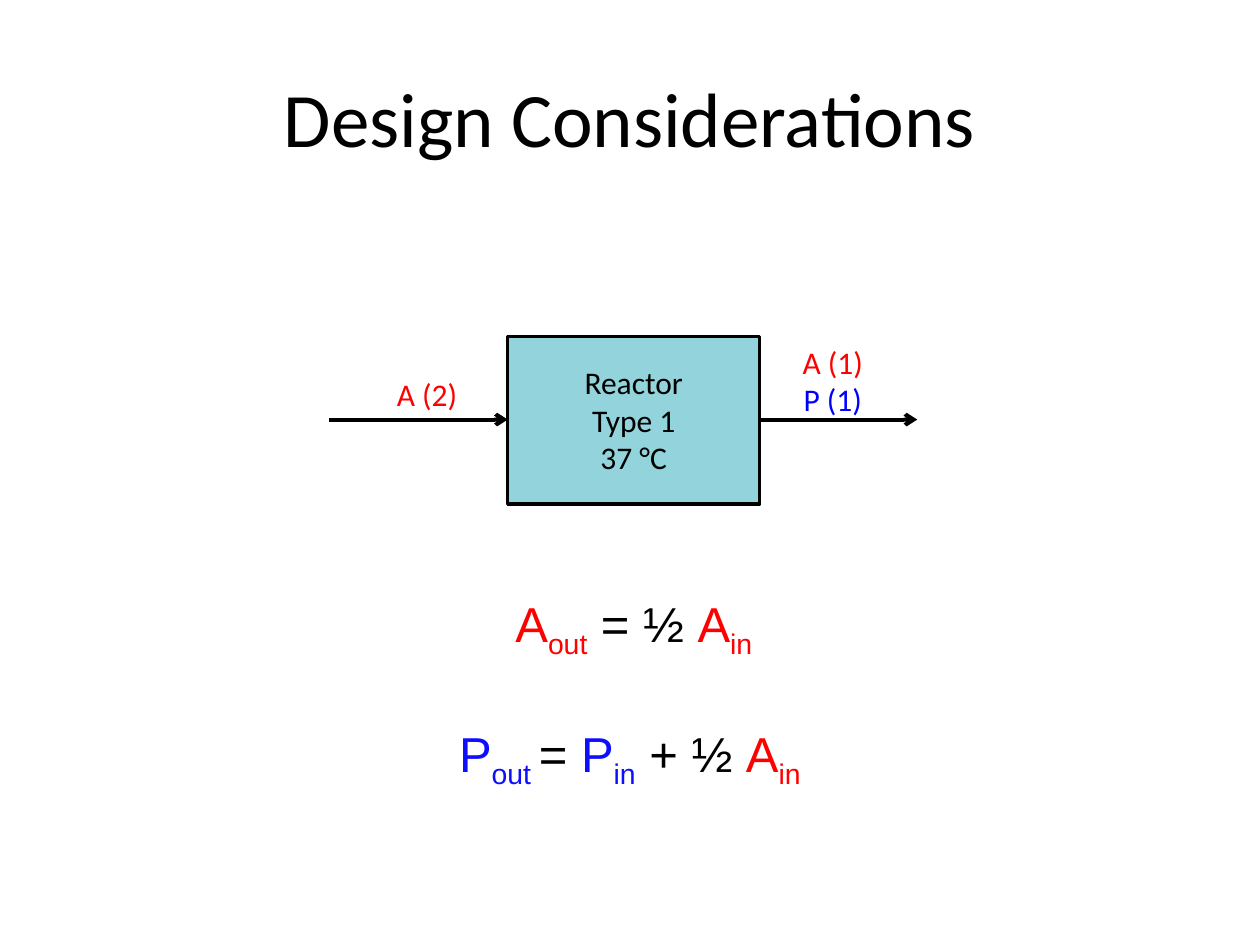
from pptx import Presentation
from pptx.dml.color import RGBColor
from pptx.enum.shapes import MSO_CONNECTOR, MSO_SHAPE
from pptx.enum.text import MSO_ANCHOR, MSO_AUTO_SIZE, PP_ALIGN
from pptx.oxml.ns import qn
from pptx.util import Inches, Pt
from lxml import etree

RECTANGLE = MSO_SHAPE.RECTANGLE
STRAIGHT = MSO_CONNECTOR.STRAIGHT
MIDDLE = MSO_ANCHOR.MIDDLE
CENTER = PP_ALIGN.CENTER
GROW = MSO_AUTO_SIZE.SHAPE_TO_FIT_TEXT
TITLE_ONLY = 5

COLORS = {
    "black": "000000",
    "reactor": "92D3DC",
    "A": "FF0000",
    "P": "0000FF",
    "P equation": "0E0EFF",
}


def color(name):
    return RGBColor.from_string(COLORS[name])


def add_run(paragraph, text, size=18, font="Calibri", fill="black", subscript=False):
    run = paragraph.add_run()
    run.text = text
    run.font.size = Pt(size)
    run.font.name = font
    run.font.color.rgb = color(fill)
    if subscript:
        run.font._element.set("baseline", "-25000")


def write_lines(frame, lines, gap=0, **style):
    """Write centred lines, each a list of (text, format) runs, gap points apart."""
    for index, runs in enumerate(lines):
        paragraph = frame.add_paragraph() if index else frame.paragraphs[0]
        paragraph.alignment = CENTER
        if index and gap:
            paragraph.space_before = Pt(gap)
        for text, run_format in runs:
            add_run(paragraph, text, **{**style, **run_format})


class ReactorSlide:
    def __init__(self, presentation):
        self.slide = presentation.slides.add_slide(presentation.slide_layouts[TITLE_ONLY])
        self.shapes = self.slide.shapes

    def title(self, text, left, top, width, height):
        title = self.slide.shapes.title
        title.left, title.top = Inches(left), Inches(top)
        title.width, title.height = Inches(width), Inches(height)
        title.text_frame.vertical_anchor = MIDDLE
        write_lines(title.text_frame, [[(text, {})]], size=44)

    def start_group(self):
        self.shapes = self.slide.shapes.add_group_shape().shapes

    def end_group(self):
        self.shapes = self.slide.shapes

    def box(self, left, top, width, height):
        shape = self.shapes.add_shape(
            RECTANGLE, Inches(left), Inches(top), Inches(width), Inches(height))
        shape.shadow.inherit = False
        shape.fill.solid()
        shape.fill.fore_color.rgb = color("reactor")
        shape.line.color.rgb = color("black")
        shape.line.width = Pt(2)

    def arrow(self, start, end, y):
        connector = self.shapes.add_connector(
            STRAIGHT, Inches(start), Inches(y), Inches(end), Inches(y))
        connector.line.color.rgb = color("black")
        connector.line.width = Pt(2.25)
        etree.SubElement(connector.line._get_or_add_ln(), qn("a:tailEnd"), type="arrow")
        etree.SubElement(connector._element.spPr, qn("a:effectLst"))

    def text(self, lines, left, top, width, height, **style):
        box = self.shapes.add_textbox(
            Inches(left), Inches(top), Inches(width), Inches(height))
        box.text_frame.word_wrap = True
        box.text_frame.auto_size = GROW
        write_lines(box.text_frame, lines, **style)


def main():
    presentation = Presentation()
    presentation.slide_width, presentation.slide_height = Inches(10), Inches(7.5)
    slide = ReactorSlide(presentation)
    slide.title("Design Considerations", 0.5, 0.3, 9, 1.25)

    reactor_left, reactor_right, flow_y = 4.03, 6.03, 3.33
    reactor_width = reactor_right - reactor_left
    a, p = {"fill": "A"}, {"fill": "P"}
    slide.start_group()
    slide.box(reactor_left, 2.67, reactor_width, 1.33)
    slide.arrow(2.61, reactor_left, flow_y)
    slide.arrow(reactor_right, 7.28, flow_y)
    slide.text([[(line, {})] for line in ("Reactor", "Type 1", "37 °C")],
               reactor_left, 2.83, reactor_width, 1.01)
    slide.text([[("A (2)", a)]], 2.39, 2.93, 2, 0.4)
    slide.text([[("A (1)", a)], [("P (1)", p)]], 5.61, 2.67, 2, 0.71)
    slide.end_group()

    p = {"fill": "P equation"}
    a_sub, p_sub = {**a, "subscript": True}, {**p, "subscript": True}
    equations = [
        [("A", a), ("out", a_sub), (" = ½ ", {}), ("A", a), ("in", a_sub)],
        [("P", p), ("out ", p_sub), ("=", {}), (" P", p), ("in", p_sub),
         (" + ½ ", {}), ("A", a), ("in ", a_sub)],
    ]
    slide.text(equations, 1.82, 4.66, 6.42, 1.36, gap=36, size=28, font="Arial")

    presentation.save("out.pptx")


if __name__ == "__main__":
    main()
